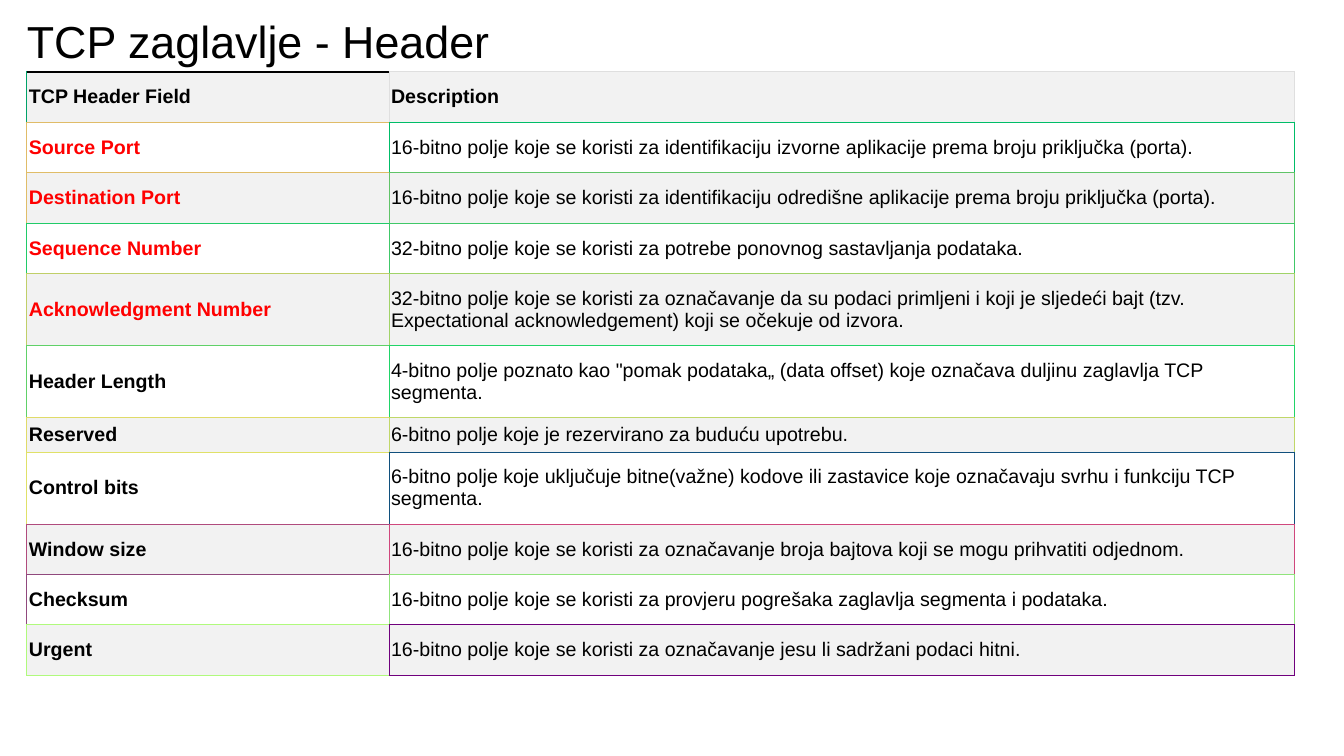
from lxml.etree import SubElement as Sub
from pptx import Presentation
from pptx.dml.color import RGBColor as RGB
from pptx.enum.text import MSO_ANCHOR as Anchor
from pptx.oxml.ns import qn
from pptx.util import Inches, Pt

BLACK, RED, WHITE, GREY = "000000", "FF0000", "FFFFFF", "F2F2F2"
LOW, MID, TALL = 4.6, 6.67, 9.52

ROWS = [
    (MID, BLACK, "TCP Header Field", "00A268", "Description", "DFDFDF"),
    (MID, RED, "Source Port", "E0BC68",
     "16-bitno polje koje se koristi za identifikaciju izvorne aplikacije prema broju priključka (porta).", "00BD68"),
    (MID, RED, "Destination Port", "E0BD68",
     "16-bitno polje koje se koristi za identifikaciju odredišne aplikacije prema broju priključka (porta).", "60C468"),
    (MID, RED, "Sequence Number", "20CB68",
     "32-bitno polje koje se koristi za potrebe ponovnog sastavljanja podataka.", "40C868"),
    (TALL, RED, "Acknowledgment Number", "C0CF68",
     "32-bitno polje koje se koristi za označavanje da su podaci primljeni i koji je sljedeći bajt (tzv. "
     "Expectational acknowledgement) koji se očekuje od izvora.", "A0D368"),
    (TALL, BLACK, "Header Length", "60D168",
     "4-bitno polje poznato kao \"pomak podataka„ (data offset) koje označava duljinu zaglavlja TCP segmenta.",
     "20D468"),
    (LOW, BLACK, "Reserved", "E0DB68", "6-bitno polje koje je rezervirano za buduću upotrebu.", "C0D768"),
    (TALL, BLACK, "Control bits", "E0E168",
     "6-bitno polje koje uključuje bitne(važne) kodove ili zastavice koje označavaju svrhu i funkciju TCP segmenta.",
     "10507D"),
    (MID, BLACK, "Window size", "B04B7D",
     "16-bitno polje koje se koristi za označavanje broja bajtova koji se mogu prihvatiti odjednom.", "D0477D"),
    (MID, BLACK, "Checksum", "90497D",
     "16-bitno polje koje se koristi za provjeru pogrešaka zaglavlja segmenta i podataka.", "90E47C"),
    (MID, BLACK, "Urgent", "B0FA7C",
     "16-bitno polje koje se koristi za označavanje jesu li sadržani podaci hitni.", "70007D"),
]


def color(hue):
    return RGB.from_string(hue)


class Deck:
    font = "Arial"

    def __init__(self, wide, high):
        self.show = Presentation()
        self.show.slide_width, self.show.slide_height = Inches(wide), Inches(high)
        self.slide = self.show.slides.add_slide(self.show.slide_layouts[6])

    def x(self, share):
        return int(self.show.slide_width * share / 100)

    def y(self, share):
        return int(self.show.slide_height * share / 100)

    def label(self, frame, text, size, hue=BLACK, bold=False):
        frame.text = text
        for run in frame.paragraphs[0].runs:
            font = run.font
            font.name, font.size, font.bold = self.font, Pt(size), bold
            font.color.rgb = color(hue)

    def title(self, text, left, top, wide, high):
        box = self.slide.shapes.add_textbox(self.x(left), self.y(top), self.x(wide), self.y(high))
        frame = box.text_frame
        frame.word_wrap = True
        frame.margin_left = 0
        frame.vertical_anchor = Anchor.MIDDLE
        self.label(frame, text, 32)
        frame.paragraphs[0].line_spacing = 0.9

    def edge(self, cell, side, hue, width=0.75):
        line = Sub(cell._tc.get_or_add_tcPr(), qn("a:ln" + side), w=str(Pt(width)))
        Sub(Sub(line, qn("a:solidFill")), qn("a:srgbClr"), val=hue)

    def cell(self, cell, text, hue, bold, fill, edges):
        for side, line in edges.items():
            self.edge(cell, side, *line)
        cell.fill.solid()
        cell.fill.fore_color.rgb = color(fill)
        cell.vertical_anchor = Anchor.MIDDLE
        cell.margin_left = cell.margin_right = Inches(0.02)
        cell.margin_top = cell.margin_bottom = Inches(0.02)
        self.label(cell.text_frame, text, 14, hue, bold)

    def table(self, rows, left, top, cols):
        high = sum(row[0] for row in rows)
        grid = self.slide.shapes.add_table(
            len(rows), len(cols), self.x(left), self.y(top), self.x(sum(cols)), self.y(high)).table
        grid.first_row = grid.horz_banding = False
        for col, wide in zip(grid.columns, cols):
            col.width = self.x(wide)
        for i, (tall, hue, name, first, text, last) in enumerate(rows):
            grid.rows[i].height = self.y(tall)
            below = rows[min(i + 1, len(rows) - 1)]
            fill = WHITE if i % 2 else GREY
            roof = (first,) if i else (BLACK, 1.5)
            self.cell(grid.cell(i, 0), name, hue, True, fill,
                      {"L": (first,), "R": (last,), "T": roof, "B": (below[3],)})
            self.cell(grid.cell(i, 1), text, BLACK, i == 0, fill,
                      {"L": (last,), "R": (last,), "T": (last,), "B": (below[5],)})


def main():
    deck = Deck(13.33, 7.5)
    deck.title("TCP zaglavlje - Header", 2, 2.1, 88.7, 7.5)
    deck.table(ROWS, 2, 9.5, (26.95, 67.4))
    deck.show.save("out.pptx")


if __name__ == "__main__":
    main()
